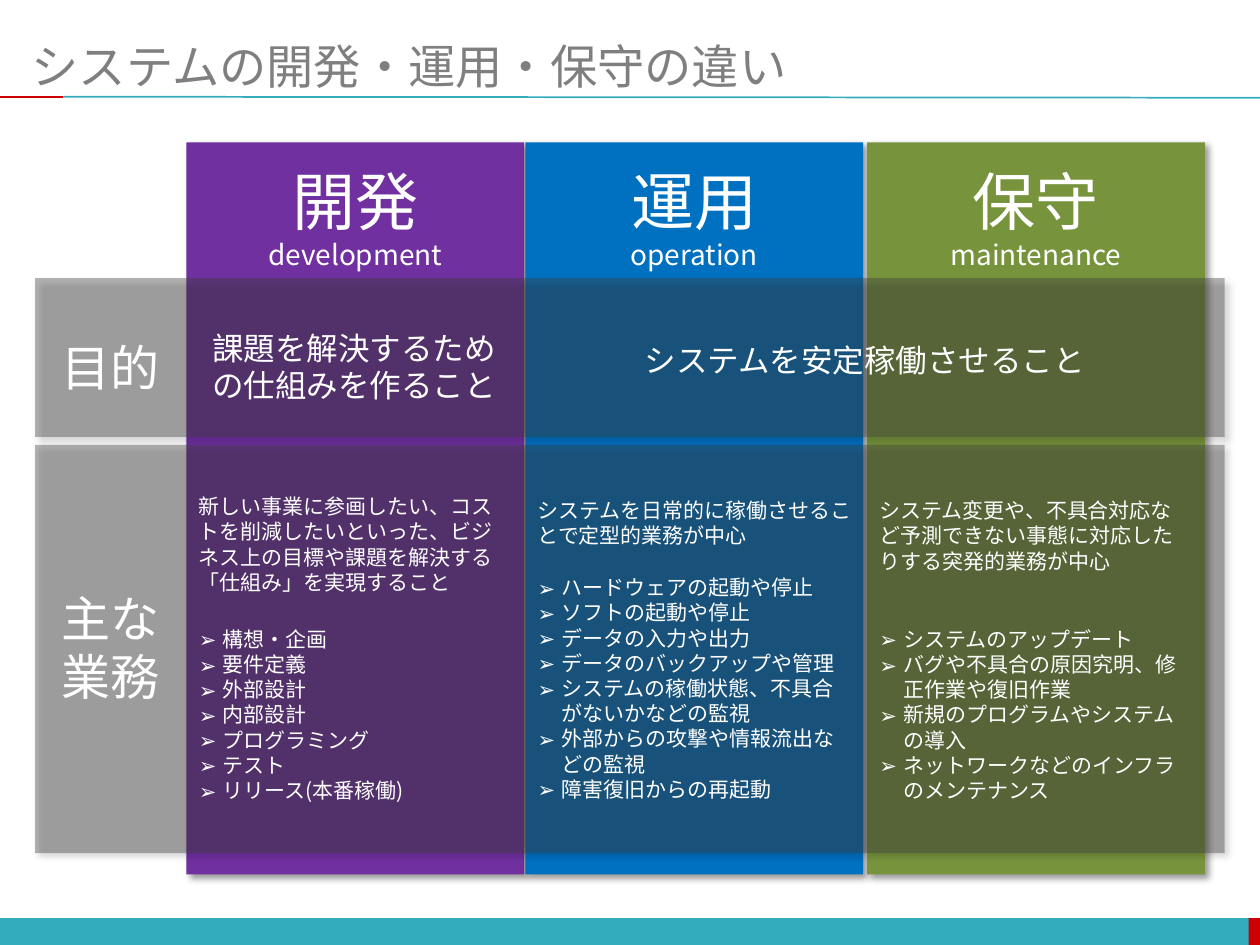
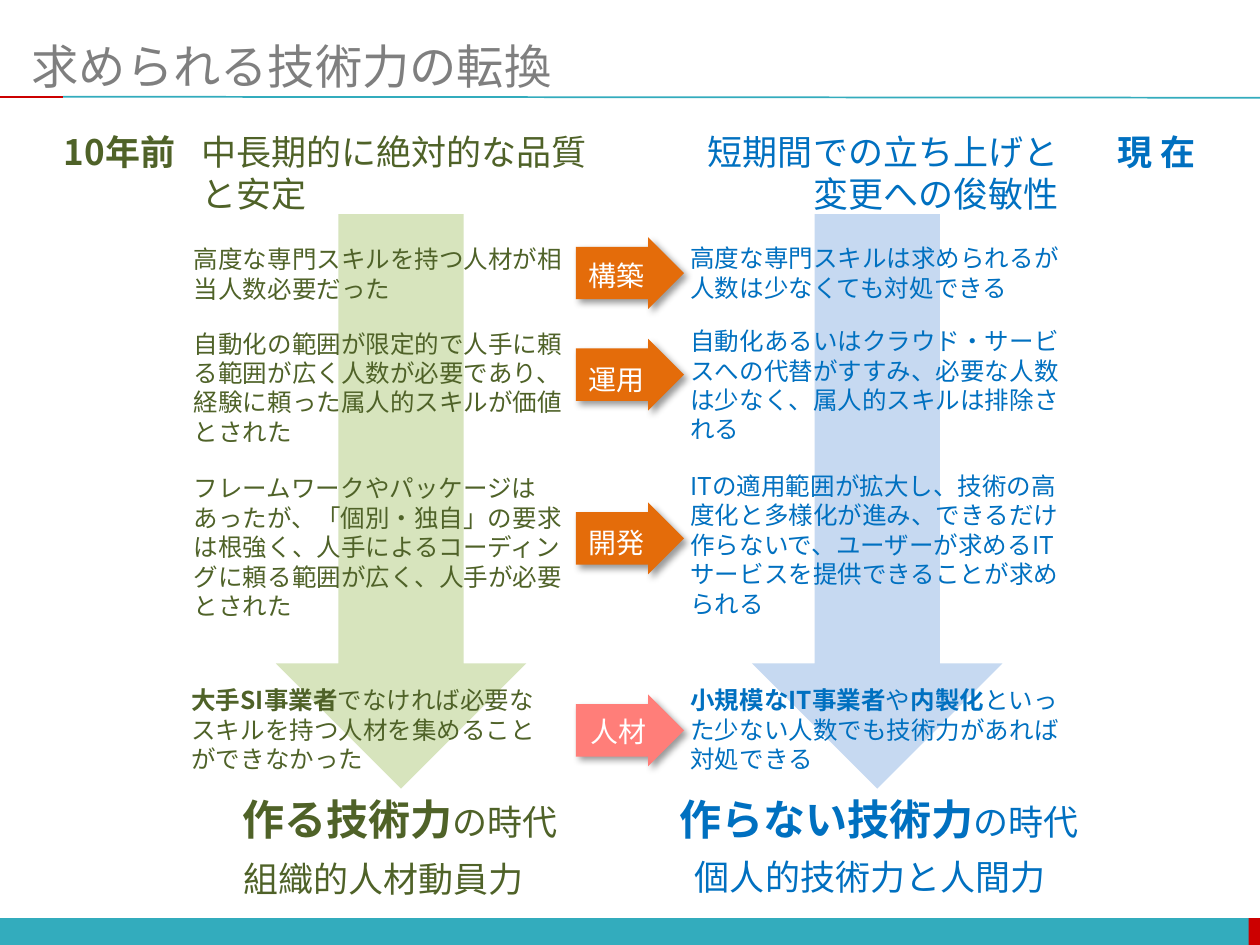
from lxml import etree
from pptx import Presentation
from pptx.dml.color import RGBColor
from pptx.enum.shapes import MSO_CONNECTOR, MSO_SHAPE
from pptx.enum.text import MSO_ANCHOR, PP_ALIGN
from pptx.oxml import parse_xml
from pptx.oxml.ns import qn
from pptx.util import Cm, Pt

RECTANGLE = MSO_SHAPE.RECTANGLE
DOWN_ARROW = MSO_SHAPE.DOWN_ARROW
RIGHT_ARROW = MSO_SHAPE.RIGHT_ARROW
STRAIGHT = MSO_CONNECTOR.STRAIGHT
LEFT, CENTER, RIGHT = PP_ALIGN.LEFT, PP_ALIGN.CENTER, PP_ALIGN.RIGHT
MIDDLE = MSO_ANCHOR.MIDDLE

FONT = "Noto Sans CJK JP"
DRAWING_NS = "http://schemas.openxmlformats.org/drawingml/2006/main"
WIDTH, HEIGHT = 25.4, 19.05
WHITE, GRAY, DARK = "FFFFFF", "7F7F7F", "404040"
TEAL, RED = "33ACBD", "CC0000"
PURPLE, BLUE, GREEN = "7030A0", "0070C0", "77933C"
DARK_GREEN, PALE_GREEN, PALE_BLUE = "4F6228", "D7E4BD", "C6D9F1"
ORANGE, PINK = "E46C0A", "FF7E79"
SHADOW = (
    f'<a:outerShdw xmlns:a="{DRAWING_NS}" blurRad="50800" dist="38100" '
    'dir="2700000" algn="tl" rotWithShape="0">'
    '<a:srgbClr val="000000"><a:alpha val="40000"/></a:srgbClr></a:outerShdw>'
)


def rgb(color):
    return RGBColor.from_string(color)


def format_font(run, size, color, bold=False):
    run.font.size = Pt(size)
    run.font.bold = bold
    run.font.color.rgb = rgb(color)
    run.font.name = FONT
    properties = run.font._element
    east_asian = etree.SubElement(properties, qn("a:ea"))
    east_asian.set("typeface", FONT)


def add_bullet(paragraph):
    properties = paragraph._p.get_or_add_pPr()
    properties.set("marL", str(Cm(0.48)))
    properties.set("indent", str(Cm(-0.48)))
    etree.SubElement(properties, qn("a:buFont")).set("typeface", FONT)
    etree.SubElement(properties, qn("a:buChar")).set("char", "➢")


def add_text(slide, box, paragraphs, size, color, align=LEFT, bold=False, bullets=False):
    """Each paragraph is a string or a list of (text, size, bold) runs."""
    text_frame = slide.shapes.add_textbox(*map(Cm, box)).text_frame
    text_frame.word_wrap = True
    for index, content in enumerate(paragraphs):
        paragraph = text_frame.add_paragraph() if index else text_frame.paragraphs[0]
        paragraph.alignment = align
        if bullets:
            add_bullet(paragraph)
        parts = [(content, size, bold)] if isinstance(content, str) else content
        for text, run_size, run_bold in parts:
            run = paragraph.add_run()
            run.text = text
            format_font(run, run_size, color, run_bold)


def add_filled(slide, kind, box, color, shadow=False, opacity=None):
    shape = slide.shapes.add_shape(kind, *map(Cm, box))
    shape.fill.solid()
    shape.fill.fore_color.rgb = rgb(color)
    shape.line.fill.background()
    shape.shadow.inherit = False
    properties = shape._element.spPr
    if shadow:
        properties.find(qn("a:effectLst")).append(parse_xml(SHADOW))
    if opacity is not None:
        fill_color = properties.find(qn("a:solidFill"))[0]
        etree.SubElement(fill_color, qn("a:alpha")).set("val", str(opacity * 1000))
    return shape


def add_rule(slide, start, end, color):
    line = slide.shapes.add_connector(STRAIGHT, *map(Cm, start + end))
    line.line.color.rgb = rgb(color)
    line.line.width = Pt(1)
    etree.SubElement(line._element.spPr, qn("a:effectLst"))


def add_titled_slide(presentation, title):
    """Title-only slide with the shared rule and footer band."""
    slide = presentation.slides.add_slide(presentation.slide_layouts[5])
    footer_top, footer_height, red_width = 18.51, 0.55, 0.25
    add_filled(slide, RECTANGLE, (0, footer_top, WIDTH, footer_height), TEAL)
    add_filled(slide, RECTANGLE,
               (WIDTH - red_width + 0.02, footer_top, red_width, footer_height), RED)
    add_rule(slide, (1.27, 1.95), (WIDTH, 1.97), TEAL)
    add_rule(slide, (0, 1.95), (1.27, 1.95), RED)

    placeholder = slide.shapes.title
    placeholder.left, placeholder.top = Cm(0.64), Cm(0.74)
    placeholder.width, placeholder.height = Cm(24.13), Cm(1.17)
    text_frame = placeholder.text_frame
    text_frame.text = title
    text_frame.vertical_anchor = MIDDLE
    text_frame.margin_left = text_frame.margin_right = 0
    paragraph = text_frame.paragraphs[0]
    paragraph.alignment = LEFT
    format_font(paragraph.runs[0], 27, GRAY)
    return slide


PHASES = [
    {"left": 3.76, "color": PURPLE, "names": ("開発", "development"),
     "intro_top": 9.83, "tasks_top": 12.5, "text_width": 6.78,
     "intro": "新しい事業に参画したい、コストを削減したいといった、"
              "ビジネス上の目標や課題を解決する「仕組み」を実現すること",
     "tasks": ["構想・企画", "要件定義", "外部設計", "内部設計", "プログラミング",
               "テスト", "リリース(本番稼働)"]},
    {"left": 10.59, "color": BLUE, "names": ("運用", "operation"),
     "intro_top": 9.91, "tasks_top": 11.46, "text_width": 6.88,
     "intro": "システムを日常的に稼働させることで定型的業務が中心",
     "tasks": ["ハードウェアの起動や停止", "ソフトの起動や停止", "データの入力や出力",
               "データのバックアップや管理",
               "システムの稼働状態、不具合がないかなどの監視",
               "外部からの攻撃や情報流出などの監視", "障害復旧からの再起動"]},
    {"left": 17.48, "color": GREEN, "names": ("保守", "maintenance"),
     "intro_top": 9.91, "tasks_top": 12.5, "text_width": 6.81,
     "intro": "システム変更や、不具合対応など予測できない事態に対応したりする"
              "突発的業務が中心",
     "tasks": ["システムのアップデート", "バグや不具合の原因究明、修正作業や復旧作業",
               "新規のプログラムやシステムの導入",
               "ネットワークなどのインフラのメンテナンス"]},
]
COLUMN_TOP, COLUMN_WIDTH, COLUMN_HEIGHT = 2.87, 6.81, 14.76
BAND_LEFT, BAND_WIDTH, BAND_LABEL_WIDTH = 0.71, 23.98, 3.02


def add_band(slide, top, height, label, label_offset):
    add_filled(slide, RECTANGLE, (BAND_LEFT, top, BAND_WIDTH, height), DARK, True, 39)
    add_text(slide, (BAND_LEFT, top + label_offset, BAND_LABEL_WIDTH, 1.44), label,
             28, WHITE, CENTER)


def add_phase_text(slide, phase):
    left, width = phase["left"], phase["text_width"]
    name, english = phase["names"]
    add_text(slide, (left, COLUMN_TOP + 0.28, COLUMN_WIDTH, 2.49),
             [[(name, 36, False)], [(english, 16, False)]], 16, WHITE, CENTER)
    add_text(slide, (left, phase["intro_top"], width, 1.8), [phase["intro"]], 12, WHITE)
    add_text(slide, (left, phase["tasks_top"], width, 3.84), phase["tasks"], 12, WHITE,
             bullets=True)


def build_phase_slide(presentation):
    slide = add_titled_slide(presentation, "システムの開発・運用・保守の違い")
    for phase in PHASES:
        add_filled(slide, RECTANGLE,
                   (phase["left"], COLUMN_TOP, COLUMN_WIDTH, COLUMN_HEIGHT),
                   phase["color"], True)
    add_band(slide, 5.61, 3.2, ["目的"], 1.07)
    add_band(slide, 8.97, 8.23, ["主な", "業務"], 2.76)
    for phase in PHASES:
        add_phase_text(slide, phase)
    add_text(slide, (3.76, 6.5, 6.76, 1.8), ["課題を解決するため", "の仕組みを作ること"],
             18, WHITE, CENTER)
    add_text(slide, (10.59, 6.76, 13.69, 1.02), ["システムを安定稼働させること"],
             18, WHITE, CENTER)


def add_era(slide, color, arrow_color, arrow_left, texts, summary):
    """Down arrow of one era with its heading, statements and closing lines."""
    add_filled(slide, DOWN_ARROW, (arrow_left, 4.32, 5.05, 11.58), arrow_color)
    for box, paragraphs, size, align, bold in texts:
        add_text(slide, box, paragraphs, size, color, align, bold)
    for box, parts in summary:
        add_text(slide, box, [parts], 20, color, CENTER)


def add_step_arrow(slide, top, label, label_offset, color, label_left=11.61):
    arrow = add_filled(slide, RIGHT_ARROW, (11.61, top, 2.18, 1.45), color, True)
    arrow.adjustments[0] = 0.729
    add_text(slide, (label_left, top + label_offset, 1.8, 0.94), [label], 16, WHITE)


def build_shift_slide(presentation):
    slide = add_titled_slide(presentation, "求められる技術力の転換")
    add_era(slide, BLUE, PALE_BLUE, 15.16, [
        ((13.06, 2.51, 8.53, 1.96), ["短期間での立ち上げと", "変更への俊敏性"],
         20, RIGHT, False),
        ((21.8, 2.51, 2.56, 1.12), ["現 在"], 20, RIGHT, True),
        ((13.67, 4.78, 8.13, 1.45),
         ["高度な専門スキルは求められるが人数は少なくても対処できる"], 14, LEFT, False),
        ((13.67, 6.45, 8.13, 2.64),
         ["自動化あるいはクラウド・サービスへの代替がすすみ、必要な人数は少なく、"
          "属人的スキルは排除される"], 14, LEFT, False),
        ((13.67, 9.37, 8.13, 3.25),
         ["ITの適用範囲が拡大し、技術の高度化と多様化が進み、できるだけ作らないで、"
          "ユーザーが求めるITサービスを提供できることが求められる"], 14, LEFT, False),
        ((13.67, 13.69, 8.13, 2.06),
         [[("小規模なIT事業者", 14, True), ("や", 14, False), ("内製化", 14, True),
           ("といった少ない人数でも技術力があれば対処できる", 14, False)]],
         14, LEFT, False),
    ], [
        ((13.28, 15.88, 8.89, 1.27), [("作らない技術力", 24, True), ("の時代", 20, False)]),
        ((13.67, 17.12, 7.75, 1.12), "個人的技術力と人間力"),
    ])
    add_era(slide, DARK_GREEN, PALE_GREEN, 5.56, [
        ((1.04, 2.51, 2.8, 1.12), ["10年前"], 20, LEFT, True),
        ((3.81, 2.51, 8.53, 1.96), ["中長期的に絶対的な品質と安定"], 20, LEFT, False),
        ((3.66, 4.8, 8.13, 1.45),
         ["高度な専門スキルを持つ人材が相当人数必要だった"], 14, LEFT, False),
        ((3.66, 6.5, 8.13, 2.64),
         ["自動化の範囲が限定的で人手に頼る範囲が広く人数が必要であり、"
          "経験に頼った属人的スキルが価値とされた"], 14, LEFT, False),
        ((3.66, 9.42, 8.13, 3.25),
         ["フレームワークやパッケージはあったが、「個別・独自」の要求は根強く、"
          "人手によるコーディングに頼る範囲が広く、人手が必要とされた"], 14, LEFT, False),
        ((3.61, 13.69, 7.75, 2.06),
         [[("大手SI事業者", 14, True),
           ("でなければ必要なスキルを持つ人材を集めることができなかった", 14, False)]],
         14, LEFT, False),
    ], [
        ((4.01, 15.88, 8.13, 1.27), [("作る技術力", 24, True), ("の時代", 20, False)]),
        ((3.86, 17.17, 7.75, 1.12), "組織的人材動員力"),
    ])
    add_step_arrow(slide, 4.78, "構築", 0.3, ORANGE)
    add_step_arrow(slide, 6.83, "運用", 0.36, ORANGE)
    add_step_arrow(slide, 10.13, "開発", 0.33, ORANGE)
    add_step_arrow(slide, 14.0, "人材", 0.27, PINK, 11.66)


def main():
    presentation = Presentation()
    presentation.slide_width, presentation.slide_height = Cm(WIDTH), Cm(HEIGHT)
    build_phase_slide(presentation)
    build_shift_slide(presentation)
    presentation.save("out.pptx")


if __name__ == "__main__":
    main()
